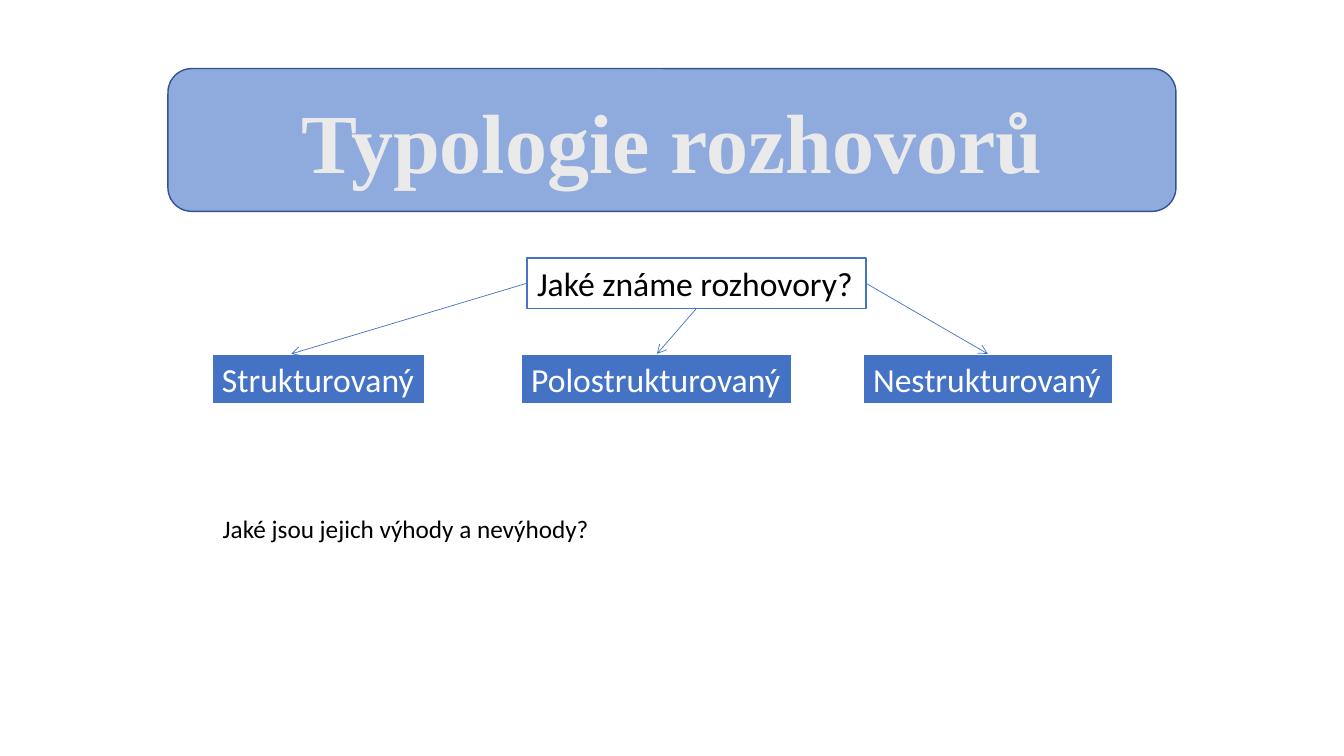
from lxml import etree
from pptx import Presentation
from pptx import util as u
from pptx.dml.color import RGBColor
from pptx.enum import shapes, text
from pptx.oxml import ns

Pt = u.Pt
COLORS = {
    "banner": "8FAADC", "banner_edge": "325491", "banner_text": "EBEAEA",
    "letter_edge": "3A5274", "blue": "4472C4", "white": "FFFFFF", "black": "000000",
}
TITLE = {"name": "Times New Roman", "size": Pt(60), "bold": True}
LABEL = {"name": "Calibri", "size": Pt(24)}
NOTE = {"name": "Calibri", "size": Pt(18)}

QUESTION_BOX = (376.5, 184.3, 242, 36)
TYPE_TOP, TYPE_HEIGHT = 252.8, 36
# wording, left, width, and the x where its arrow lands
INTERVIEW_TYPES = [
    ("Strukturovaný", 151.5, 152.5, 208),
    ("Polostrukturovaný", 372.3, 193.7, 469.3),
    ("Nestrukturovaný", 616.6, 178.4, 705.6),
]


def rgb(color):
    return RGBColor.from_string(COLORS[color])


def write(frame, wording, style, color):
    run = frame.paragraphs[0].add_run()
    run.text = wording
    for attribute, value in style.items():
        setattr(run.font, attribute, value)
    run.font.color.rgb = rgb(color)
    return run


def outline_letters(run, color, width):
    edge = etree.Element(ns.qn("a:ln"), w=str(Pt(width)))
    fill = etree.SubElement(edge, ns.qn("a:solidFill"))
    etree.SubElement(fill, ns.qn("a:srgbClr"), val=COLORS[color])
    run.font._element.insert(0, edge)


def add_panel(slide, preset, box, fill, edge, edge_width):
    panel = slide.shapes.add_shape(preset, *map(Pt, box))
    panel.shadow.inherit = False
    panel.fill.solid()
    panel.fill.fore_color.rgb = rgb(fill)
    panel.line.color.rgb = rgb(edge)
    panel.line.width = Pt(edge_width)
    return panel


def add_banner(slide, wording, box):
    banner = add_panel(slide, shapes.MSO_SHAPE.ROUNDED_RECTANGLE, box,
                       "banner", "banner_edge", 1)
    frame = banner.text_frame
    frame.vertical_anchor = text.MSO_ANCHOR.MIDDLE
    frame.paragraphs[0].alignment = text.PP_ALIGN.CENTER
    outline_letters(write(frame, wording, TITLE, "banner_text"), "letter_edge", 1)


def fit_text(frame, wording, style, color):
    """Write one unwrapped line, left and top, in a box that grows with it."""
    frame.word_wrap = False
    frame.auto_size = text.MSO_AUTO_SIZE.SHAPE_TO_FIT_TEXT
    frame.vertical_anchor = text.MSO_ANCHOR.TOP
    frame.paragraphs[0].alignment = text.PP_ALIGN.LEFT
    write(frame, wording, style, color)


def add_label(slide, wording, box, fill, edge, edge_width, color):
    label = add_panel(slide, shapes.MSO_SHAPE.RECTANGLE, box, fill, edge, edge_width)
    fit_text(label.text_frame, wording, LABEL, color)


def add_arrow(slide, start, end):
    arrow = slide.shapes.add_connector(shapes.MSO_CONNECTOR.STRAIGHT,
                                       *map(Pt, start + end))
    arrow.line.color.rgb = rgb("blue")
    arrow.line.width = Pt(0.5)
    etree.SubElement(arrow.line._get_or_add_ln(), ns.qn("a:tailEnd"), type="arrow")
    etree.SubElement(arrow._element.spPr, ns.qn("a:effectLst"))


def add_note(slide, wording, box):
    note = slide.shapes.add_textbox(*map(Pt, box))
    fit_text(note.text_frame, wording, NOTE, "black")


def main():
    deck = Presentation()
    deck.slide_width, deck.slide_height = Pt(960), Pt(540)
    slide = deck.slides.add_slide(deck.slide_layouts[6])

    add_banner(slide, "Typologie rozhovorů", (120, 49, 720, 102))
    add_label(slide, "Jaké známe rozhovory?", QUESTION_BOX,
              "white", "blue", 1, "black")

    left, top, width, height = QUESTION_BOX
    arrow_starts = [(left, top + height / 2),
                    (left + width / 2, top + height),
                    (left + width, top + height / 2)]
    for (wording, type_left, type_width, target), start in zip(INTERVIEW_TYPES, arrow_starts):
        add_label(slide, wording, (type_left, TYPE_TOP, type_width, TYPE_HEIGHT),
                  "blue", "white", 1.5, "white")
        add_arrow(slide, start, (target, TYPE_TOP))

    add_note(slide, "Jaké jsou jejich výhody a nevýhody?", (152, 363, 279, 29))
    deck.save("out.pptx")


if __name__ == "__main__":
    main()
